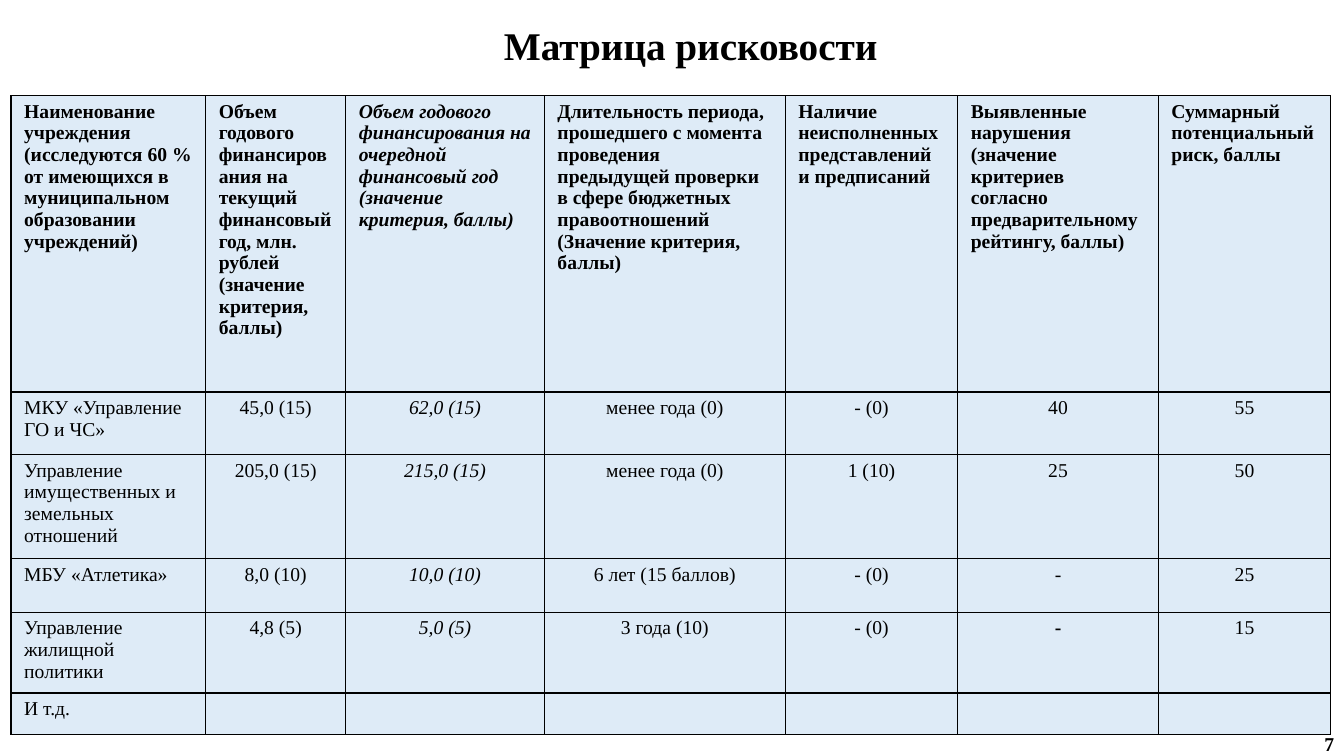
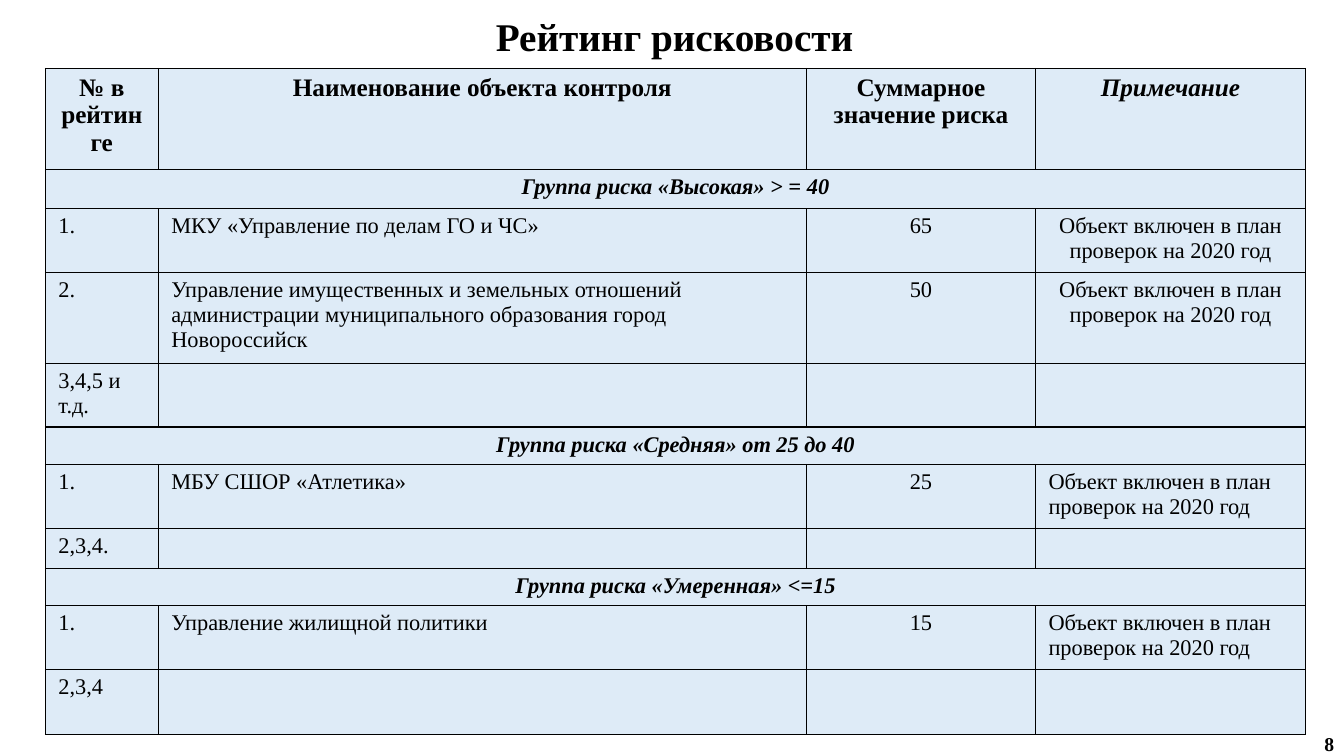
from pptx import Presentation
from pptx.dml.color import RGBColor
from pptx.enum.text import MSO_ANCHOR as Anchor, PP_ALIGN as Align
from pptx.oxml import parse_xml
from pptx.oxml.ns import nsdecls

PX = 9144
BLACK = RGBColor(0x00, 0x00, 0x00)
PALE = RGBColor(0xDE, 0xEB, 0xF7)
FACE = "Times New Roman"


class Deck:
    """Hold the shared style and the current slide, and draw each kind of element."""

    def __init__(self):
        self.prs = Presentation()
        self.prs.slide_width = 1333 * PX
        self.prs.slide_height = 750 * PX
        self.slide = None

    def label(self, frame, text, align=Align.LEFT, **style):
        para = frame.paragraphs[0]
        para.alignment = align
        run = para.add_run()
        run.text = text
        look = {"name": FACE, "size": 14, "bold": False, "italic": False, **style}
        look["size"] *= 12700
        for key, value in look.items():
            setattr(run.font, key, value)
        run.font.color.rgb = BLACK
        return para

    def place(self, shape, box):
        for key, value in zip(("left", "top", "width", "height"), box):
            setattr(shape, key, value * PX)
        frame = shape.text_frame
        frame.word_wrap = True
        frame.vertical_anchor = Anchor.MIDDLE
        return frame

    def start(self, title, box, page):
        self.slide = self.prs.slides.add_slide(self.prs.slide_layouts[5])
        frame = self.place(self.slide.shapes.title, box)
        para = self.label(frame, title, Align.CENTER, size=28, bold=True)
        para.line_spacing = 0.9
        note = self.slide.shapes.add_textbox(0, 0, PX, PX)
        frame = self.place(note, (1265, 714, 68, 47))
        self.label(frame, str(page), Align.RIGHT, bold=True)

    def edge(self, cell):
        props = cell._tc.get_or_add_tcPr()
        for spot, side in enumerate("LRTB"):
            line = parse_xml(
                f'<a:ln{side} {nsdecls("a")} w="12700"><a:solidFill>'
                f'<a:srgbClr val="{BLACK}"/></a:solidFill></a:ln{side}>'
            )
            props.insert(spot, line)

    def table(self, left, top, widths, heights, data, style):
        grid = self.slide.shapes.add_table(
            len(heights), len(widths), left * PX, top * PX,
            sum(widths) * PX, sum(heights) * PX,
        ).table
        grid.horz_banding = False
        for col, width in zip(grid.columns, widths):
            col.width = width * PX
        for row, height in zip(grid.rows, heights):
            row.height = height * PX
        pads = {"margin_left": 13, "margin_right": 13, "margin_top": 5, "margin_bottom": 5}
        for cell in grid.iter_cells():
            for key, value in pads.items():
                setattr(cell, key, value * PX)
            cell.fill.solid()
            cell.fill.fore_color.rgb = PALE
            self.edge(cell)
        for r, texts in enumerate(data):
            if len(texts) == 1:
                grid.cell(r, 0).merge(grid.cell(r, len(widths) - 1))
            for c, text in enumerate(texts):
                if text:
                    self.label(grid.cell(r, c).text_frame, text, **style(r, c))


RISKS = [
    [
        "Наименование учреждения (исследуются 60 % от имеющихся в муниципальном образовании учреждений)",
        "Объем годового финансирования на текущий финансовый год, млн. рублей (значение критерия, баллы)",
        "Объем годового финансирования на очередной финансовый год (значение критерия, баллы)",
        "Длительность периода, прошедшего с момента проведения предыдущей проверки "
        "в сфере бюджетных правоотношений (Значение критерия, баллы)",
        "Наличие неисполненных представлений и предписаний",
        "Выявленные нарушения (значение критериев согласно предварительному рейтингу, баллы)",
        "Суммарный потенциальный риск, баллы",
    ],
    ["МКУ «Управление ГО и ЧС»", "45,0 (15)", "62,0 (15)", "менее года (0)", "- (0)", "40", "55"],
    ["Управление имущественных и земельных отношений", "205,0 (15)", "215,0 (15)",
     "менее года (0)", "1 (10)", "25", "50"],
    ["МБУ «Атлетика»", "8,0 (10)", "10,0 (10)", "6 лет (15 баллов)", "- (0)", "-", "25"],
    ["Управление жилищной политики", "4,8 (5)", "5,0 (5)", "3 года (10)", "- (0)", "-", "15"],
    ["И т.д."] + [""] * 6,
]

PLAN = "Объект включен в план проверок на 2020 год"
RANKS = [
    ["№ в рейтинге", "Наименование объекта контроля", "Суммарное значение риска", "Примечание"],
    ["Группа риска «Высокая» > = 40"],
    ["1.", "МКУ «Управление по делам ГО и ЧС»", "65", PLAN],
    ["2.", "Управление имущественных и земельных отношений администрации "
     "муниципального образования город Новороссийск", "50", PLAN],
    ["3,4,5 и т.д.", "", "", ""],
    ["Группа риска «Средняя» от 25 до 40"],
    ["1.", "МБУ СШОР «Атлетика»", "25", PLAN],
    ["2,3,4.", "", "", ""],
    ["Группа риска «Умеренная» <=15"],
    ["1.", "Управление жилищной политики", "15", PLAN],
    ["2,3,4", "", "", ""],
]


def risk_style(r, c):
    return {
        "align": Align.CENTER if r and c else Align.LEFT,
        "bold": r == 0 or (r, c) == (4, 5),
        "italic": c == 2,
    }


def rank_style(r, c):
    head, group = r == 0, len(RANKS[r]) == 1
    mid = head or group or c == 2 or (c == 3 and r < 4)
    return {
        "align": Align.CENTER if mid else Align.LEFT,
        "size": 18 if head else 16,
        "bold": head or group,
        "italic": group or (head and c == 3),
    }


def main():
    deck = Deck()
    deck.start("Матрица рисковости", (124, 9, 1122, 77), 7)
    deck.table(11, 95, [193, 139, 197, 239, 171, 199, 171],
               [294, 62, 103, 53, 74, 41], RISKS, risk_style)
    deck.start("Рейтинг рисковости", (43, 0, 1252, 77), 8)
    deck.table(45, 68, [112, 643, 227, 268],
               [100, 39, 63, 90, 63, 37, 63, 40, 37, 63, 64], RANKS, rank_style)
    deck.prs.save("out.pptx")


if __name__ == "__main__":
    main()
